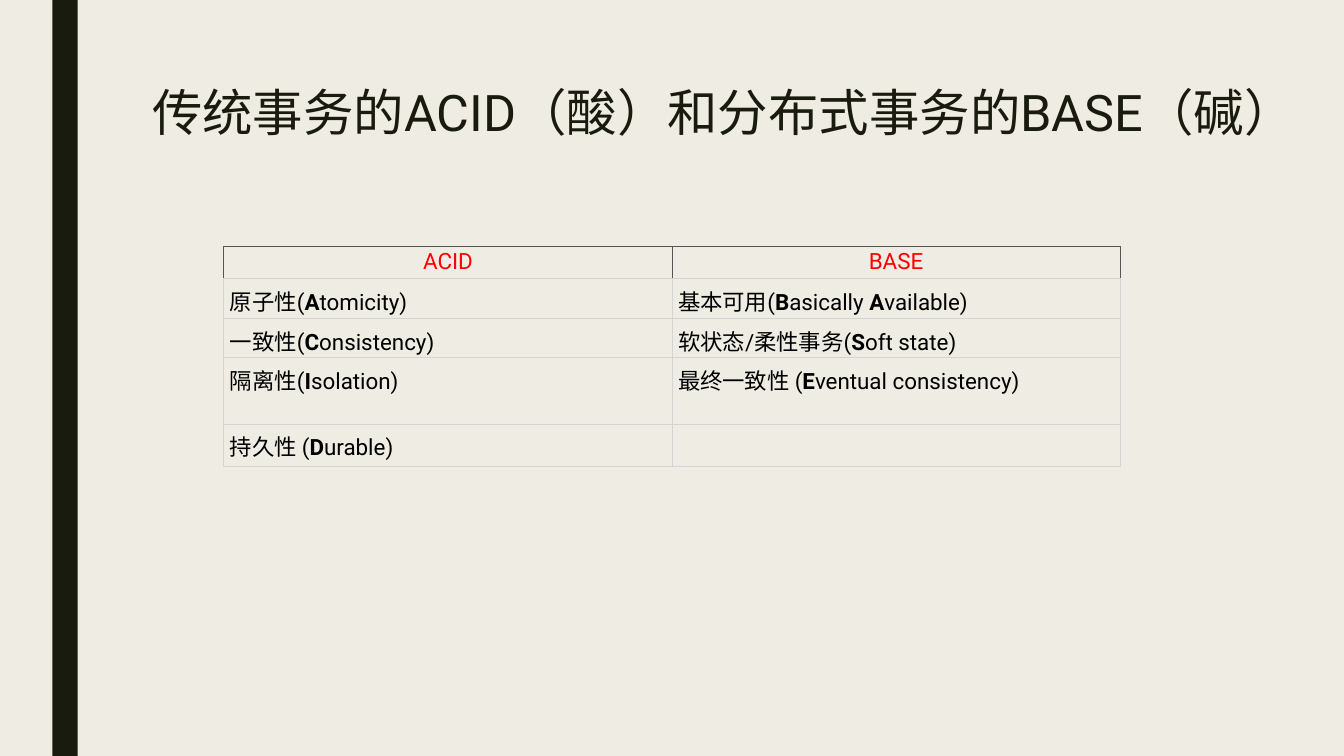
from lxml import etree
from pptx import Presentation
from pptx import util as u
from pptx.dml.color import RGBColor
from pptx.enum import shapes, text
from pptx.oxml.ns import qn

INK = "191B0E"
GRID = "D4D4D4"
HEADER_EDGE = "555555"
ROW_HEIGHTS = [0.32, 0.39, 0.39, 0.66, 0.39]
ROWS = [
    ("ACID", "BASE"),
    ("原子性(*A*tomicity)", "基本可用(*B*asically *A*vailable)"),
    ("一致性(*C*onsistency)", "软状态/柔性事务(*S*oft state)"),
    ("隔离性(*I*solation)", "最终一致性 (*E*ventual consistency)"),
    ("持久性 (*D*urable)", ""),
]


def paint(color_format, color):
    color_format.rgb = RGBColor.from_string(color)


def write(frame, words, size=16, color="000000", align=text.PP_ALIGN.LEFT, spacing=None):
    para = frame.paragraphs[0]
    para.alignment = align
    if spacing:
        para.line_spacing = spacing
    for index, part in enumerate(words.split("*")):
        span = para.add_run()
        span.text = part
        span.font.name = "Roboto"
        span.font.size = u.Pt(size)
        span.font.bold = index % 2 == 1
        paint(span.font.color, color)


def set_borders(cell, edges):
    properties = cell._tc.get_or_add_tcPr()
    for index, (side, color) in enumerate(edges.items()):
        line = etree.Element(qn(f"a:ln{side}"), w=str(u.Pt(0.75)))
        fill = etree.SubElement(line, qn("a:solidFill"))
        etree.SubElement(fill, qn("a:srgbClr"), val=color)
        properties.insert(index, line)


def add_side_bar(page, left, top, width, height):
    bar = page.shapes.add_shape(
        shapes.MSO_SHAPE.RECTANGLE, *map(u.Inches, (left, top, width, height))
    )
    bar.shadow.inherit = False
    bar.fill.solid()
    paint(bar.fill.fore_color, INK)
    bar.line.fill.background()


def add_title(page, left, top, width, height):
    box = page.shapes.add_textbox(*map(u.Inches, (left, top, width, height)))
    frame = box.text_frame
    frame.word_wrap = True
    frame.vertical_anchor = text.MSO_ANCHOR.TOP
    write(frame, "传统事务的ACID（酸）和分布式事务的BASE（碱）", size=36, color=INK, spacing=0.89)


def fill_cell(cell, words, header):
    cell.margin_left = cell.margin_right = u.Inches(0.04 if header else 0.06)
    cell.margin_top = cell.margin_bottom = u.Inches(0.03 if header else 0.06)
    cell.fill.background()
    if header:
        write(cell.text_frame, words, color="FF0000", align=text.PP_ALIGN.CENTER)
    else:
        write(cell.text_frame, words)
    edge = HEADER_EDGE if header else GRID
    top = HEADER_EDGE if header else GRID
    set_borders(cell, {"L": edge, "R": edge, "T": top, "B": GRID})


def add_comparison(page, left, top, width, height):
    frame = page.shapes.add_table(
        len(ROWS), len(ROWS[0]), *map(u.Inches, (left, top, width, height))
    )
    table = frame.table
    table.first_row = table.horz_banding = False
    for row_index, (row, row_height) in enumerate(zip(ROWS, ROW_HEIGHTS)):
        table.rows[row_index].height = u.Inches(row_height)
        for column_index, words in enumerate(row):
            fill_cell(table.cell(row_index, column_index), words, row_index == 0)


def main():
    deck = Presentation()
    deck.slide_width, deck.slide_height = u.Inches(13.33), u.Inches(7.5)
    page = deck.slides.add_slide(deck.slide_layouts[6])
    page.background.fill.solid()
    paint(page.background.fill.fore_color, "EFEDE3")
    add_side_bar(page, 0.52, 0, 0.25, 7.5)
    add_title(page, 1.41, 0.83, 11.67, 1)
    add_comparison(page, 2.22, 2.44, 8.89, sum(ROW_HEIGHTS))
    deck.save("out.pptx")


if __name__ == "__main__":
    main()
